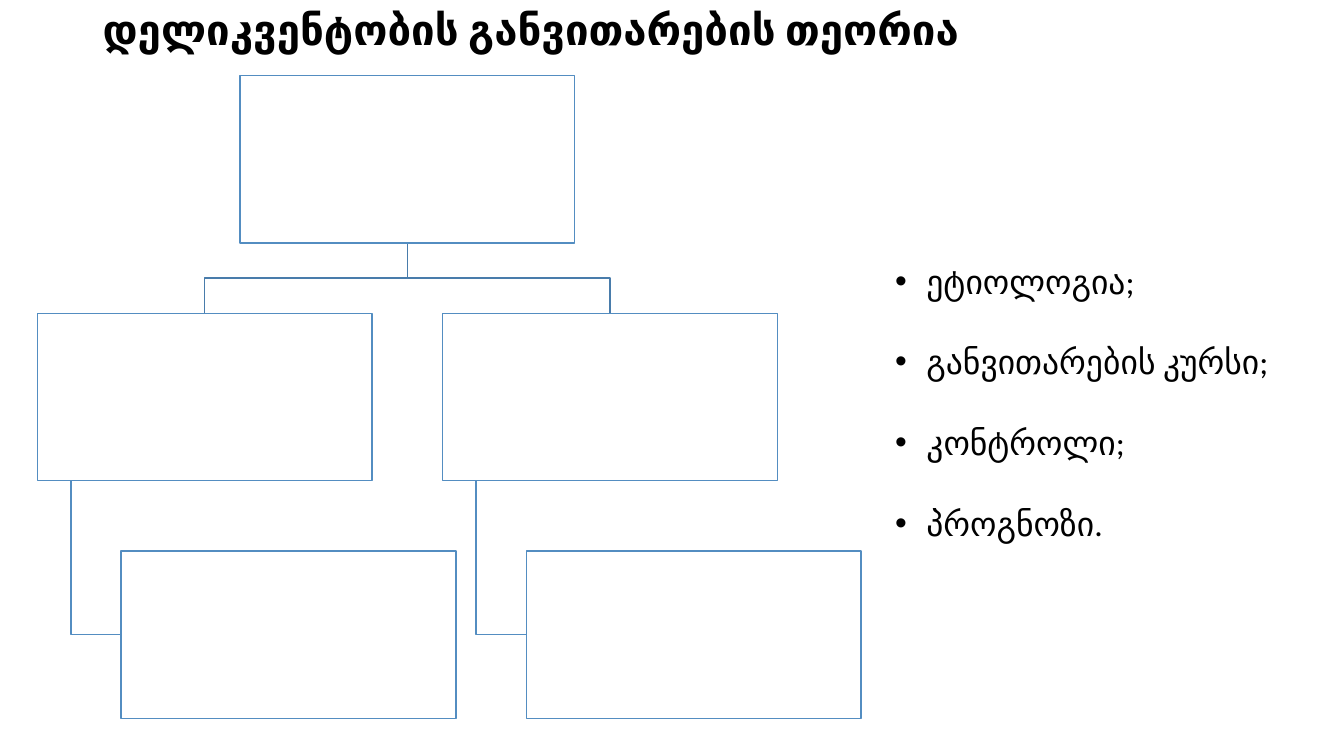
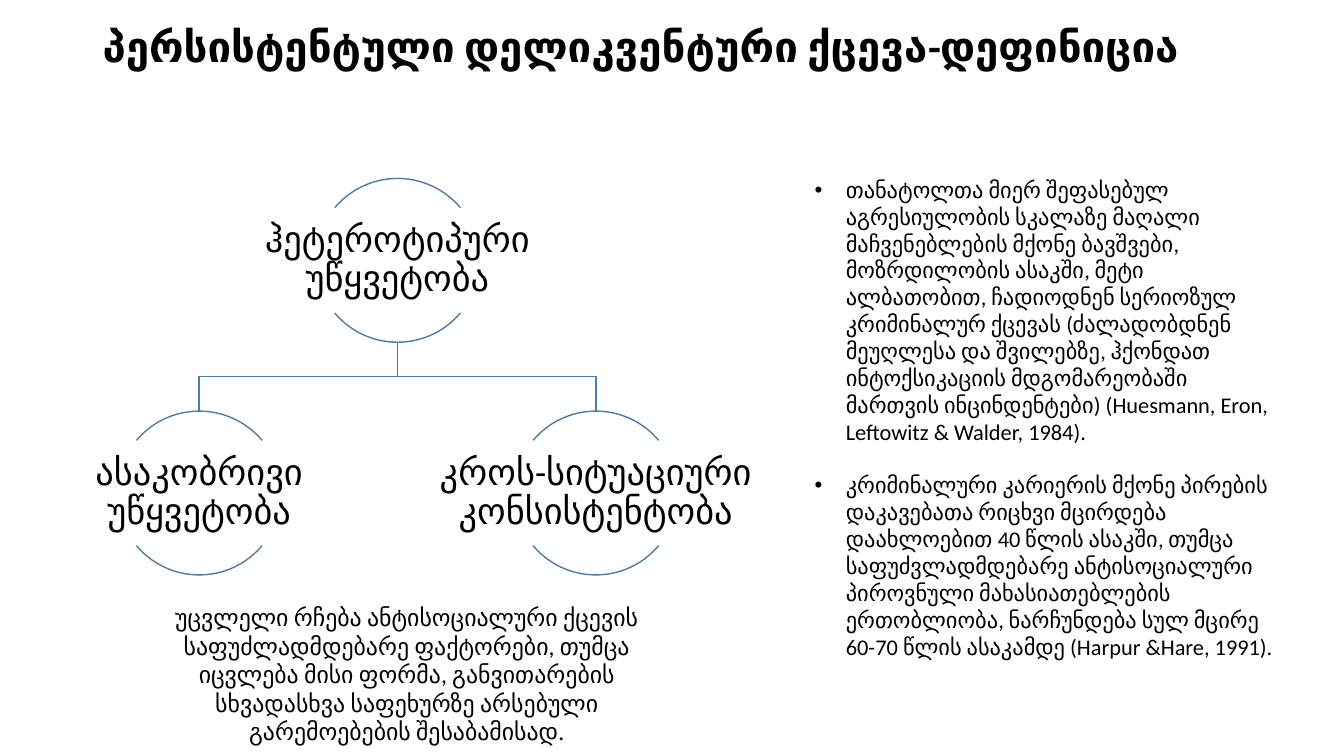
from collections import namedtuple

from lxml import etree
from pptx import Presentation
from pptx import util as u
from pptx.dml.color import RGBColor
from pptx.enum import shapes, text
from pptx.oxml.ns import qn

BLACK = RGBColor(0x00, 0x00, 0x00)
WHITE = RGBColor(0xFF, 0xFF, 0xFF)
BRIGHT_BLUE = RGBColor(0x53, 0x8D, 0xC1)
DEEP_BLUE = RGBColor(0x49, 0x7C, 0xAB)

FONT = "Calibri"
PAGE_W, PAGE_H = u.Inches(13.33), u.Inches(7.5)
BULLET_INDENT = u.Inches(0.31)
TIGHT = u.Inches(0.02)

# Shared chart proportions, as shares of one node's width
NODE_H = 0.5
GAP = 0.21
LEAF_INDENT = 0.25
SPINE = 0.1
LABEL_H = 0.32

Box = namedtuple("Box", "x y w h")


def region(x, y, w, h):
    """Box from percentages of the slide's width and height."""
    return Box(int(PAGE_W * x / 100), int(PAGE_H * y / 100),
               int(PAGE_W * w / 100), int(PAGE_H * h / 100))


def add_bullet(paragraph):
    props = paragraph._p.get_or_add_pPr()
    props.set("marL", str(BULLET_INDENT))
    props.set("indent", str(-BULLET_INDENT))
    etree.SubElement(props, qn("a:buFont")).set("typeface", "Arial")
    etree.SubElement(props, qn("a:buChar")).set("char", "•")


def write(shape, *lines, size, bold=False, align=text.PP_ALIGN.LEFT,
          spacing=None, bullets=False, inset=None):
    """Fill a shape with one paragraph per line, a blank line's height apart."""
    frame = shape.text_frame
    frame.word_wrap = True
    frame.vertical_anchor = text.MSO_ANCHOR.MIDDLE
    if inset is not None:
        frame.margin_left = frame.margin_right = inset
        frame.margin_top = frame.margin_bottom = inset
    for index, line in enumerate(lines):
        paragraph = frame.add_paragraph() if index else frame.paragraphs[0]
        paragraph.alignment = align
        if spacing:
            paragraph.line_spacing = spacing
        if index:
            paragraph.space_before = u.Pt(size * 1.2)
        if bullets:
            add_bullet(paragraph)
        run = paragraph.add_run()
        run.text = line
        run.font.name = FONT
        run.font.size = u.Pt(size)
        run.font.bold = bold
        run.font.color.rgb = BLACK


def style(shape, fill=None, line=None):
    shape.shadow.inherit = False
    if fill is None:
        shape.fill.background()
    else:
        shape.fill.solid()
        shape.fill.fore_color.rgb = fill
    if line is None:
        shape.line.fill.background()
    else:
        shape.line.color.rgb = line
        shape.line.width = u.Pt(1)
    return shape


def draw(slide, kind, box, fill=None, line=None):
    return style(slide.shapes.add_shape(kind, *box), fill, line)


def polyline(slide, points, color):
    start, *rest = [(int(x), int(y)) for x, y in points]
    builder = slide.shapes.build_freeform(*start)
    builder.add_line_segments(rest, close=False)
    style(builder.convert_to_shape(), line=color)


def title(slide, box, line):
    write(slide.shapes.add_textbox(*box), line, size=30, bold=True, spacing=0.9)


def panel(slide, box, *lines, kind=shapes.MSO_SHAPE.ROUNDED_RECTANGLE, **look):
    write(draw(slide, kind, box, fill=WHITE), *lines, **look)


def family(box, node_w):
    """Cells of a parent centred above two children."""
    step = node_w * (1 + GAP)
    child_y = box.y + node_w * (NODE_H + GAP)
    spots = ((box.x + step / 2, box.y), (box.x, child_y), (box.x + step, child_y))
    return [Box(int(x), int(y), int(node_w), int(node_w * NODE_H)) for x, y in spots]


def branches(slide, parent, children):
    parent_x, parent_bottom = parent.x + parent.w / 2, parent.y + parent.h
    for child in children:
        middle, child_x = (parent_bottom + child.y) / 2, child.x + child.w / 2
        polyline(slide, [(parent_x, parent_bottom), (parent_x, middle),
                         (child_x, middle), (child_x, child.y)], DEEP_BLUE)


def hierarchy(slide, box):
    """Empty boxes: a parent, two children and a leaf hanging from each child."""
    node_w = box.w / (2 + GAP + LEAF_INDENT)
    parent, *children = family(box, node_w)
    leaves = [child._replace(x=int(child.x + node_w * LEAF_INDENT),
                             y=int(child.y + node_w * (NODE_H + GAP)))
              for child in children]
    for child, leaf in zip(children, leaves):
        spine_x, leaf_y = child.x + node_w * SPINE, leaf.y + leaf.h / 2
        polyline(slide, [(spine_x, child.y + child.h), (spine_x, leaf_y),
                         (leaf.x, leaf_y)], BRIGHT_BLUE)
    branches(slide, parent, children)
    for node in (parent, *children, *leaves):
        draw(slide, shapes.MSO_SHAPE.RECTANGLE, node, WHITE, BRIGHT_BLUE)


def arc_label(slide, cell, words):
    """Words between the upper and lower arcs of one circle."""
    circle = Box(cell.x + (cell.w - cell.h) // 2, cell.y, cell.h, cell.h)
    for start, end in ((220, 320), (40, 140)):
        arc = draw(slide, shapes.MSO_SHAPE.ARC, circle, line=DEEP_BLUE)
        arc.adjustments[0] = start * 0.6
        arc.adjustments[1] = end * 0.6
    height = int(cell.w * LABEL_H)
    label = slide.shapes.add_textbox(
        cell.x, cell.y + (cell.h - height) // 2, cell.w, height)
    write(label, words, size=26, align=text.PP_ALIGN.CENTER, spacing=0.9, inset=TIGHT)


def circle_hierarchy(slide, box, labels):
    cells = family(box, box.w / (2 + GAP))
    branches(slide, cells[0], cells[1:])
    for cell, words in zip(cells, labels):
        arc_label(slide, cell, words)


def theory_slide(slide):
    title(slide, region(6.9, 0, 86.25, 8.4), "დელიკვენტობის განვითარების თეორია")
    hierarchy(slide, region(2.78, 10, 61.29, 85))
    panel(slide, region(65.87, 8.4, 34.13, 89.47),
          "ეტიოლოგია;", "განვითარების კურსი;", "კონტროლი;", "პროგნოზი.",
          kind=shapes.MSO_SHAPE.RECTANGLE, size=24, bullets=True)


def definition_slide(slide):
    title(slide, region(6.9, 2.53, 86.25, 8),
          "პერსისტენტული დელიკვენტური ქცევა-დეფინიცია")
    circle_hierarchy(slide, region(2.63, 23.6, 53.9, 52.3), (
        "ჰეტეროტიპური უწყვეტობა",
        "ასაკობრივი უწყვეტობა",
        "კროს-სიტუაციური კონსისტენტობა"))
    panel(slide, region(10.5, 78.4, 39.53, 21.6),
          "უცვლელი რჩება ანტისოციალური ქცევის საფუძლადმდებარე ფაქტორები, "
          "თუმცა იცვლება მისი ფორმა, განვითარების სხვადასხვა საფეხურზე "
          "არსებული გარემოებების შესაბამისად.",
          size=17, align=text.PP_ALIGN.CENTER)
    panel(slide, region(57.9, 10.53, 40.43, 89.47),
          "თანატოლთა მიერ შეფასებულ აგრესიულობის სკალაზე მაღალი "
          "მაჩვენებლების მქონე ბავშვები, მოზრდილობის ასაკში, მეტი ალბათობით, "
          "ჩადიოდნენ სერიოზულ კრიმინალურ ქცევას (ძალადობდნენ მეუღლესა და "
          "შვილებზე, ჰქონდათ ინტოქსიკაციის მდგომარეობაში მართვის "
          "ინცინდენტები) (Huesmann, Eron, Leftowitz & Walder, 1984).",
          "კრიმინალური კარიერის მქონე პირების დაკავებათა რიცხვი მცირდება "
          "დაახლოებით 40 წლის ასაკში, თუმცა საფუძვლადმდებარე ანტისოციალური "
          "პიროვნული მახასიათებლების ერთობლიობა, ნარჩუნდება სულ მცირე "
          "60-70 წლის ასაკამდე (Harpur &Hare, 1991).",
          size=16, bullets=True)


def main():
    deck = Presentation()
    deck.slide_width, deck.slide_height = PAGE_W, PAGE_H
    blank = deck.slide_layouts[6]
    for build in (theory_slide, definition_slide):
        build(deck.slides.add_slide(blank))
    deck.save("out.pptx")


if __name__ == "__main__":
    main()
